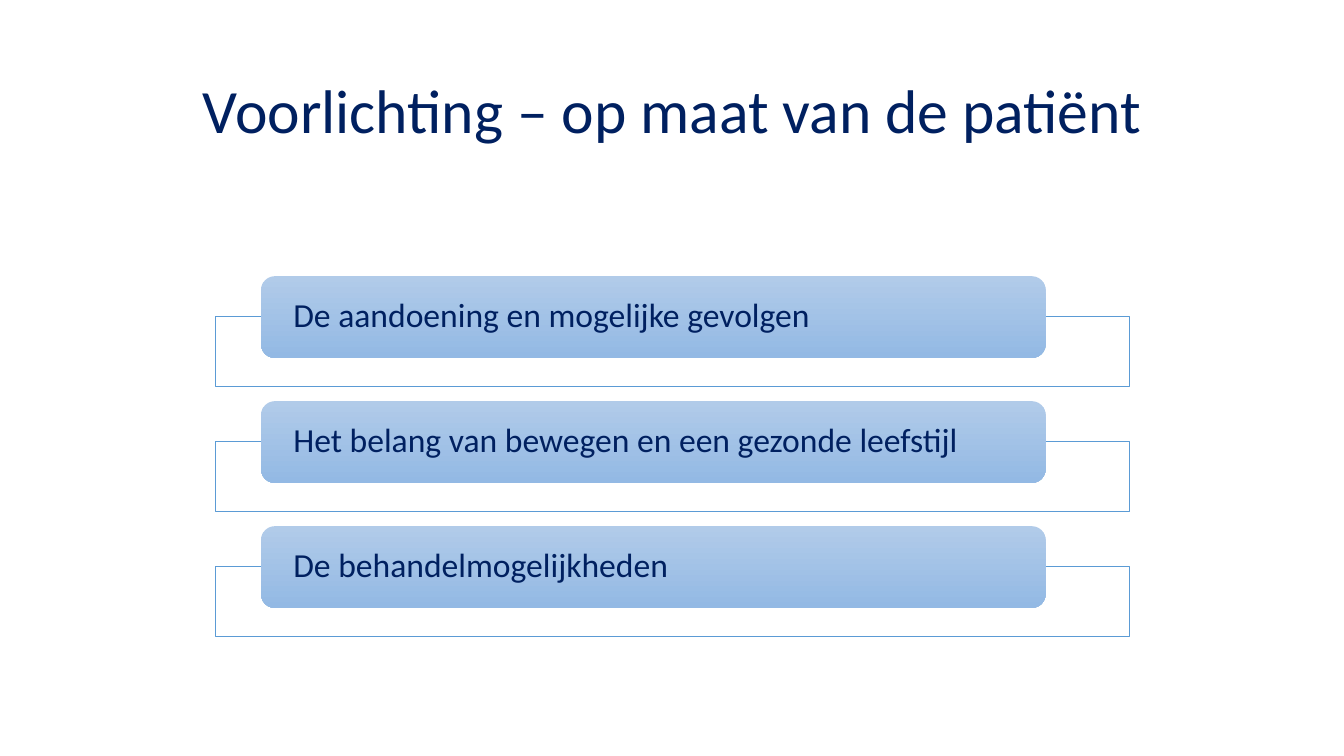
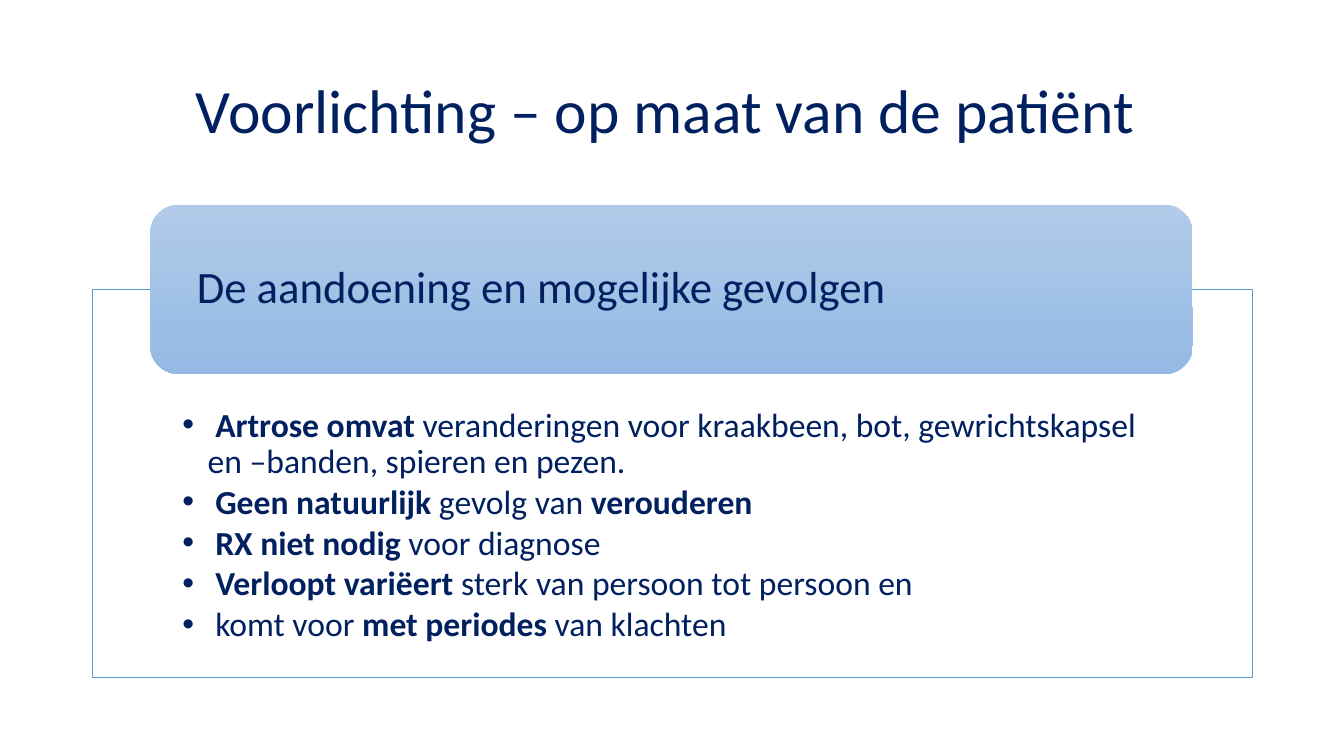
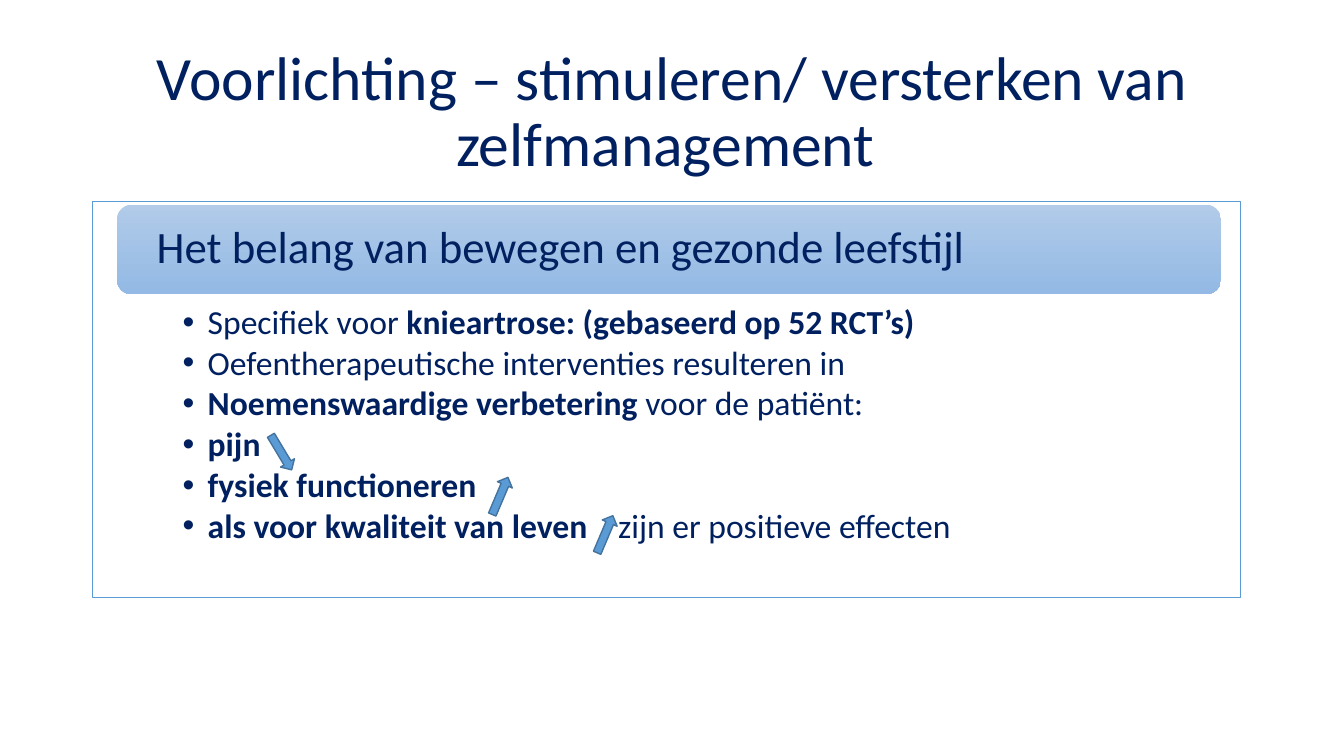
from lxml import etree
from pptx import Presentation
from pptx import util as u
from pptx.dml.color import RGBColor
from pptx.enum import shapes, text
from pptx.oxml.ns import qn

PX = 9144  # 100 px to the inch
NAVY = RGBColor(0x00, 0x20, 0x60)
BLUE = RGBColor(0x5B, 0x9B, 0xD5)
DARK_BLUE = RGBColor(0x43, 0x73, 0x9E)
PILL_TOP = RGBColor(0xB1, 0xCB, 0xE9)
PILL_BOTTOM = RGBColor(0x93, 0xB9, 0xE4)
WHITE = RGBColor(0xFF, 0xFF, 0xFF)
FONT = "Calibri"
SHAPE = shapes.MSO_SHAPE

prs = Presentation()
prs.slide_width, prs.slide_height = 1333 * PX, 750 * PX


def add_box(s, kind, at, margins=(0, 0, 0, 0)):
    sp = s.shapes.add_shape(kind, *(n * PX for n in at))
    sp.shadow.inherit = False
    tf = sp.text_frame
    tf.word_wrap = True
    tf.margin_left, tf.margin_top, tf.margin_right, tf.margin_bottom = (
        n * PX for n in margins)
    if kind == SHAPE.ROUNDED_RECTANGLE:
        sp.fill.gradient()
        sp.fill.gradient_angle = 270
        for stop, color in zip(sp.fill.gradient_stops, (PILL_TOP, PILL_BOTTOM)):
            stop.color.rgb = color
        sp.line.fill.background()
    else:
        sp.fill.solid()
        sp.fill.fore_color.rgb = WHITE
        sp.line.color.rgb = BLUE
        sp.line.width = u.Pt(0.5)
    return sp


def style(p, size, align=text.PP_ALIGN.LEFT):
    p.alignment = align
    p.line_spacing = 0.9
    for r in p.runs:
        r.font.name = FONT
        r.font.size = u.Pt(size)
        r.font.color.rgb = NAVY


# Each slide: title, then panels of (frame, pill, heading, size, pill margin,
# body top margin, bullets); a bullet is a list of (text, bold)
slides = [
    ("Voorlichting – op maat van de patiënt", [
        ((214, 314 + 124 * i, 906, 69), (259, 274 + 124 * i, 778, 81),
         heading, 24, 28, 0, [])
        for i, heading in enumerate((
            "De aandoening en mogelijke gevolgen",
            "Het belang van bewegen en een gezonde leefstijl",
            "De behandelmogelijkheden"))]),
    ("Voorlichting – op maat van de patiënt ", [
        ((92, 287, 1150, 385), (149, 203, 1034, 168),
         "De aandoening en mogelijke gevolgen", 32, 38, 118, [
             [(" Artrose omvat ", True),
              ("veranderingen voor kraakbeen, bot, gewrichtskapsel "
               "en –banden, spieren en pezen.", False)],
             [(" Geen natuurlijk ", True), ("gevolg van ", False),
              ("verouderen", True)],
             [(" RX niet nodig ", True), ("voor diagnose", False)],
             [(" Verloopt variëert ", True),
              ("sterk van persoon tot persoon en", False)],
             [(" komt voor ", False), ("met periodes ", True),
              ("van klachten", False)]])]),
    ("Voorlichting – stimuleren/ versterken van zelfmanagement ", [
        ((92, 200, 1138, 393), (116, 203, 1095, 89),
         "Het belang van bewegen en gezonde leefstijl", 32, 35, 103, [
             [("Specifiek voor ", False),
              ("knieartrose: (gebaseerd op 52 RCT’s)", True)],
             [("Oefentherapeutische interventies resulteren in", False)],
             [("Noemenswaardige verbetering ", True),
              ("voor de patiënt:", False)],
             [("pijn", True)],
             [("fysiek functioneren", True)],
             [("als voor kwaliteit van leven\t", True),
              ("zijn er positieve effecten", False)]])]),
]

for title, panels in slides:
    s = prs.slides.add_slide(prs.slide_layouts[6])

    # Title
    tf = s.shapes.add_textbox(92 * PX, 40 * PX, 1150 * PX, 145 * PX).text_frame
    tf.word_wrap = True
    tf.vertical_anchor = text.MSO_ANCHOR.MIDDLE
    tf.text = title
    style(tf.paragraphs[0], 44, text.PP_ALIGN.CENTER)

    for frame, pill, heading, size, margin, body_top, bullets in panels:
        # Frame with bullets
        tf = add_box(s, SHAPE.RECTANGLE, frame, (89, body_top, 89, 19)).text_frame
        tf.vertical_anchor = text.MSO_ANCHOR.TOP
        for i, bullet in enumerate(bullets):
            p = tf.add_paragraph() if i else tf.paragraphs[0]
            pPr = p._p.get_or_add_pPr()
            pPr.set("marL", str(25 * PX))
            pPr.set("indent", str(-25 * PX))
            etree.SubElement(pPr, qn("a:buFont"), typeface="Arial")
            etree.SubElement(pPr, qn("a:buChar"), char="•")
            tabs = etree.SubElement(pPr, qn("a:tabLst"))
            etree.SubElement(tabs, qn("a:tab"), pos=str(432 * PX), algn="l")
            for words, bold in bullet:
                r = p.add_run()
                r.text = words
                r.font.bold = bold
            style(p, 24)
            p.space_after = u.Pt(3.2)

        # Heading pill
        tf = add_box(s, SHAPE.ROUNDED_RECTANGLE, pill, (margin, 0, margin, 0)).text_frame
        tf.vertical_anchor = text.MSO_ANCHOR.MIDDLE
        tf.text = heading
        style(tf.paragraphs[0], size)

# Trend arrows on the last slide
for x, y, angle in ((271, 429, 329), (488, 472, 203), (592, 510, 203)):
    sp = add_box(s, SHAPE.DOWN_ARROW, (x, y, 16, 40))
    sp.rotation = angle
    sp.fill.fore_color.rgb = BLUE
    sp.line.color.rgb = DARK_BLUE
    sp.line.width = u.Pt(1)

prs.save("out.pptx")
